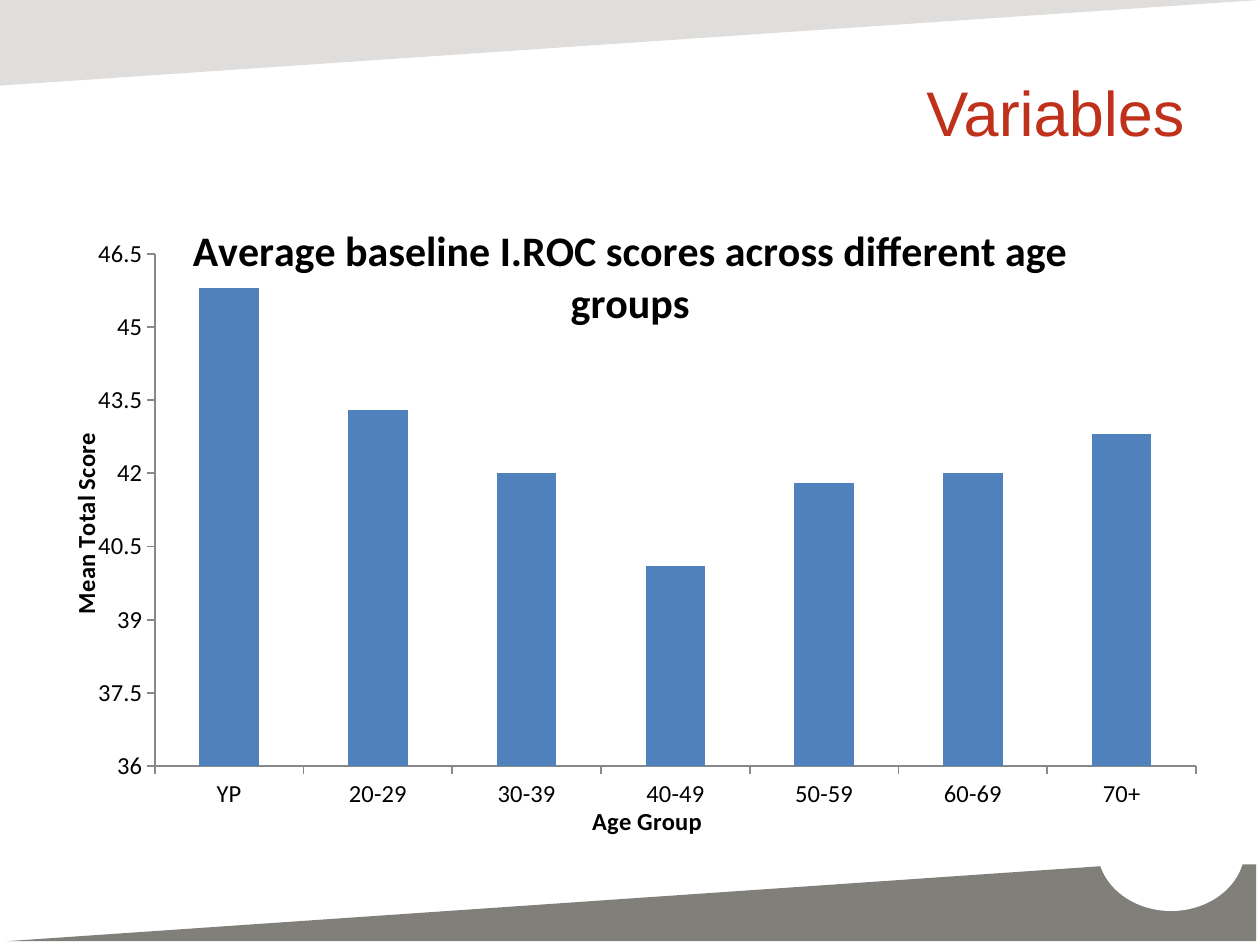
from lxml import etree
from pptx import Presentation
from pptx.chart.data import CategoryChartData
from pptx.dml.color import RGBColor
from pptx.enum.chart import XL_CHART_TYPE, XL_TICK_LABEL_POSITION, XL_TICK_MARK
from pptx.enum.shapes import MSO_SHAPE
from pptx.enum.text import MSO_ANCHOR, PP_ALIGN
from pptx.oxml import parse_xml
from pptx.oxml.ns import nsdecls, qn
from pptx.util import Inches, Pt

COLUMNS = XL_CHART_TYPE.COLUMN_CLUSTERED
LABELS_LOW = XL_TICK_LABEL_POSITION.LOW
TICK_OUT, TICK_NONE = XL_TICK_MARK.OUTSIDE, XL_TICK_MARK.NONE
TRIANGLE, OVAL, RECTANGLE = MSO_SHAPE.ISOSCELES_TRIANGLE, MSO_SHAPE.OVAL, MSO_SHAPE.RECTANGLE
MIDDLE = MSO_ANCHOR.MIDDLE
RIGHT = PP_ALIGN.RIGHT

COLORS = {
    "band": "807F79",
    "paper": "FFFFFF",
    "heading": "BF311A",
    "ink": "000000",
    "axis": "888888",
    "column": "4F81BD",
}
SCORES = {
    "YP": 45.8,
    "20-29": 43.3,
    "30-39": 42,
    "40-49": 40.1,
    "50-59": 41.8,
    "60-69": 42,
    "70+": 42.8,
}


def color(key):
    return RGBColor.from_string(COLORS[key])


def style_font(font, size, key="ink", name="Calibri", bold=False):
    font.size = Pt(size)
    font.name = name
    font.bold = bold
    font.color.rgb = color(key)


def write_text(frame, text, align=None, **style):
    paragraph = frame.paragraphs[0]
    paragraph.alignment = align
    run = paragraph.add_run()
    run.text = text
    style_font(run.font, **style)


class SlideBuilder:
    def __init__(self, slide):
        self.slide = slide

    def title(self, text, left, top, width, height):
        heading = self.slide.shapes.title
        heading.left, heading.top = Inches(left), Inches(top)
        heading.width, heading.height = Inches(width), Inches(height)
        heading.text_frame.vertical_anchor = MIDDLE
        write_text(heading.text_frame, text, align=RIGHT, size=36, key="heading", name="Arial")

    def shape(self, preset, left, top, width, height, key):
        shape = self.slide.shapes.add_shape(
            preset, Inches(left), Inches(top), Inches(width), Inches(height))
        shape.shadow.inherit = False
        shape.fill.solid()
        shape.fill.fore_color.rgb = color(key)
        shape.line.fill.background()
        return shape

    def wedge(self, left, top, width, height, turned=False, opacity=None):
        wedge = self.shape(TRIANGLE, left, top, width, height, "band")
        wedge.adjustments[0] = 1
        if turned:
            transform = wedge.element.spPr.find(qn("a:xfrm"))
            transform.set("flipH", "1")
            transform.set("flipV", "1")
        if opacity is not None:
            fill_color = wedge.element.spPr.find(".//" + qn("a:srgbClr"))
            etree.SubElement(fill_color, qn("a:alpha"), val=str(opacity * 1000))

    def axis(self, axis, title):
        axis.has_major_gridlines = False
        axis.major_tick_mark = TICK_OUT
        axis.minor_tick_mark = TICK_NONE
        axis.format.line.color.rgb = color("axis")
        axis.format.line.width = Pt(1)
        style_font(axis.tick_labels.font, 14)
        write_text(axis.axis_title.text_frame, title, size=14, bold=True)

    def column_chart(self, title, scores, box, plot):
        data = CategoryChartData()
        data.categories = list(scores)
        data.add_series("Series 1", list(scores.values()))
        chart = self.slide.shapes.add_chart(COLUMNS, *map(Inches, box), data).chart
        chart.has_legend = False
        style_font(chart.font, 10, name="Arial")

        write_text(chart.chart_title.text_frame, title, size=24, bold=True)
        chart.chart_title._element.get_or_add_overlay().set("val", "1") if hasattr(
            chart.chart_title._element, "get_or_add_overlay") else self.overlay(chart.chart_title)

        self.axis(chart.category_axis, "Age Group")
        chart.category_axis.tick_label_position = LABELS_LOW
        scale = chart.value_axis
        self.axis(scale, "Mean Total Score")
        scale.minimum_scale, scale.maximum_scale, scale.major_unit = 36, 46.5, 1.5
        scale.tick_labels.number_format = "0.####"
        scale.tick_labels.number_format_is_linked = False

        columns = chart.plots[0]
        columns.gap_width = 150
        columns.vary_by_categories = False
        columns.series[0].format.fill.solid()
        columns.series[0].format.fill.fore_color.rgb = color("column")
        self.place_plot(chart, plot)

    def overlay(self, chart_title):
        element = chart_title._element
        flag = element.find(qn("c:overlay"))
        if flag is None:
            flag = parse_xml(f"<c:overlay {nsdecls('c')}/>")
            before = element.find(qn("c:layout"))
            if before is None:
                before = element.find(qn("c:tx"))
            before.addnext(flag)
        flag.set("val", "1")

    def place_plot(self, chart, plot):
        area = chart.element.find(".//" + qn("c:plotArea"))
        for layout in area.findall(qn("c:layout")):
            area.remove(layout)
        layout = etree.Element(qn("c:layout"))
        manual = etree.SubElement(layout, qn("c:manualLayout"))
        settings = [("layoutTarget", "inner"), ("xMode", "edge"), ("yMode", "edge")]
        settings += zip("xywh", map(str, plot))
        for tag, value in settings:
            etree.SubElement(manual, qn("c:" + tag), val=value)
        area.insert(0, layout)


def main():
    deck = Presentation()
    deck.slide_width, deck.slide_height = Inches(10), Inches(7.5)
    builder = SlideBuilder(deck.slides.add_slide(deck.slide_layouts[5]))
    builder.wedge(0.05, 6.79, 9.92, 0.68)
    builder.shape(OVAL, 8.71, 6.24, 1.17, 0.99, "paper")
    builder.shape(RECTANGLE, 9.3, 6.24, 0.7, 0.62, "paper")
    builder.wedge(0, 0, 10, 0.68, turned=True, opacity=25)
    builder.title("Variables", 2.24, 0.53, 7.26, 0.7)
    builder.column_chart(
        "Average baseline I.ROC scores across different age groups",
        SCORES,
        box=(0.51, 1.55, 8.99, 5.15),
        plot=(0.08, 0.09, 0.92, 0.79),
    )
    deck.save("out.pptx")


if __name__ == "__main__":
    main()
